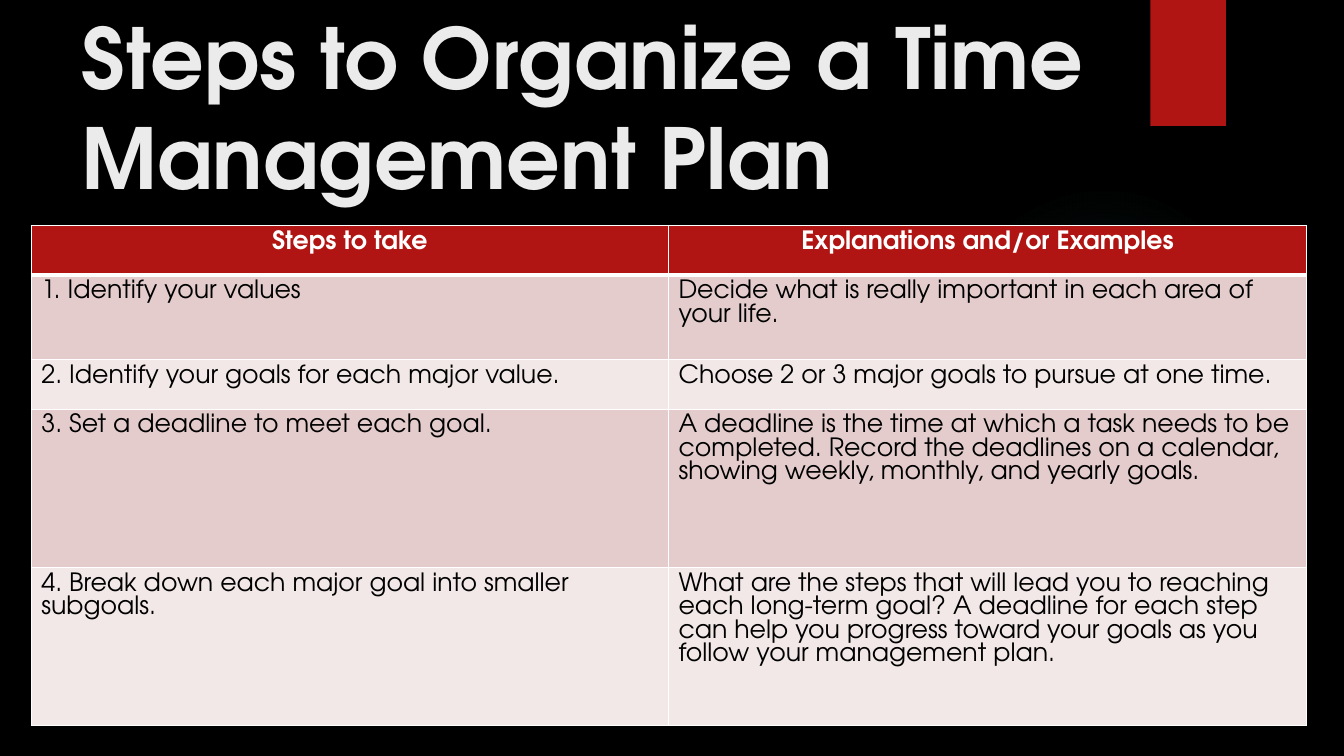
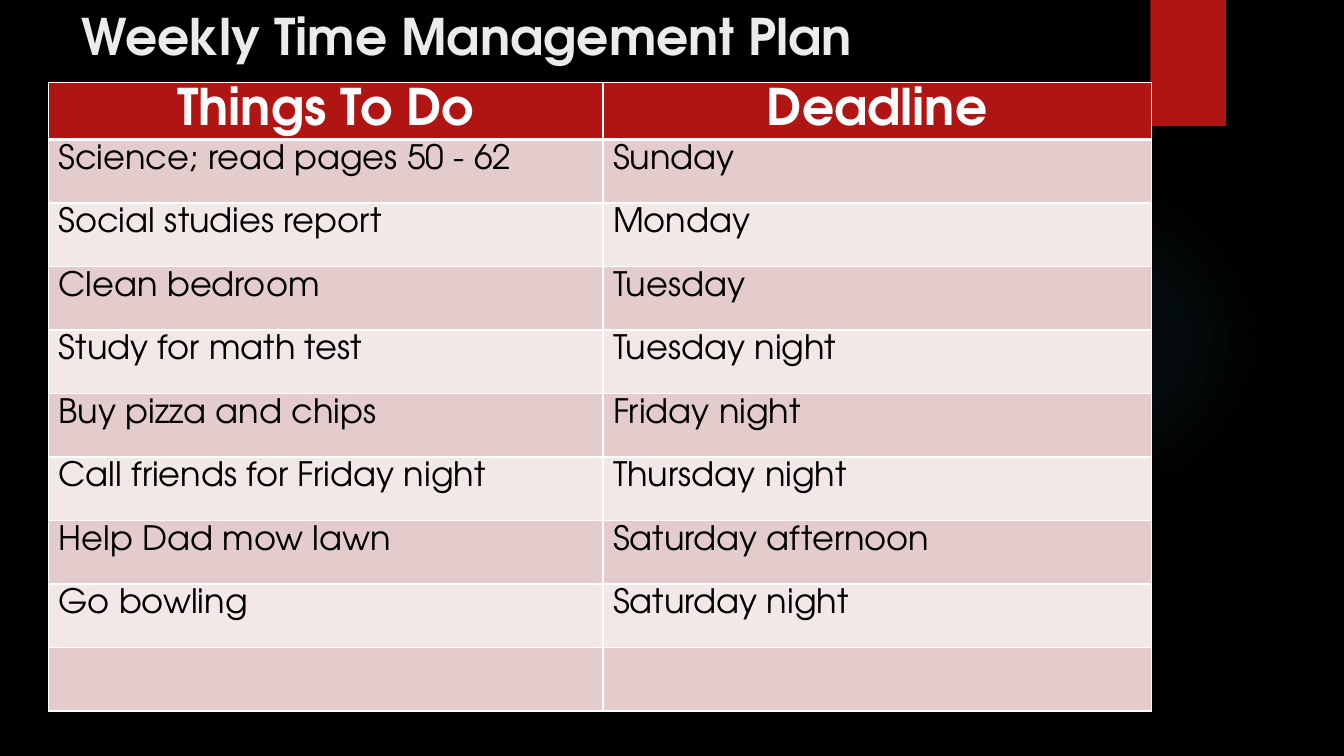
from lxml import etree
from pptx import Presentation
from pptx import util as u
from pptx.dml.color import RGBColor
from pptx.enum import shapes, text
from pptx.oxml import parse_xml
from pptx.oxml.ns import nsdecls, qn

Inches = u.Inches
FONT = "TeX Gyre Adventor"
BLACK, WHITE, TITLE, RED, GLOW = "000000", "FFFFFF", "EBEBEB", "B01513", "50B9C1"
BANDS = ("E4CCCC", "F2E8E7")
GLOW_STOPS = ((0, 7), (36, 6), (69, 0))


def color(value):
    """Turn a hex string into a colour."""
    return RGBColor.from_string(value)


class Deck:
    """Hold the shared style and the current slide."""

    def __init__(self):
        """Start an empty widescreen presentation."""
        self.presentation = Presentation()
        self.presentation.slide_width = Inches(13.33)
        self.presentation.slide_height = Inches(7.5)
        self.slide = None

    def add_slide(self, title, size, height):
        """Add a slide with its background, decoration and title."""
        self.slide = self.presentation.slides.add_slide(self.presentation.slide_layouts[5])
        background = self.slide.background.fill
        background.solid()
        background.fore_color.rgb = color(BLACK)
        self.add_glow()
        self.add_tab()
        self.set_title(title, size, height)

    def add_plain_shape(self, kind, left, top, width, height):
        """Add a red shape without outline or shadow."""
        shape = self.slide.shapes.add_shape(
            kind, Inches(left), Inches(top), Inches(width), Inches(height))
        shape.shadow.inherit = False
        shape.line.fill.background()
        shape.fill.solid()
        shape.fill.fore_color.rgb = color(RED)
        return shape

    def add_glow(self):
        """Add the faint round glow."""
        shape = self.add_plain_shape(shapes.MSO_SHAPE.OVAL, 9.41, 1.83, 3.08, 3.08)
        stops = "".join(
            f'<a:gs pos="{place * 1000}"><a:srgbClr val="{GLOW}">'
            f'<a:alpha val="{alpha * 1000}"/></a:srgbClr></a:gs>'
            for place, alpha in GLOW_STOPS)
        properties = shape._element.spPr
        properties.replace(properties.find(qn("a:solidFill")), parse_xml(
            f'<a:gradFill {nsdecls("a")}><a:gsLst>{stops}</a:gsLst><a:path path="circle">'
            '<a:fillToRect l="50000" t="50000" r="50000" b="50000"/></a:path></a:gradFill>'))

    def add_tab(self):
        """Add the red tab with its soft shadow."""
        shape = self.add_plain_shape(shapes.MSO_SHAPE.RECTANGLE, 11.41, 0, 0.75, 1.25)
        shape._element.spPr.find(qn("a:effectLst")).append(parse_xml(
            f'<a:outerShdw {nsdecls("a")} blurRad="{u.Pt(3)}" dist="{u.Pt(2)}" dir="5400000">'
            f'<a:srgbClr val="{BLACK}"><a:alpha val="45000"/></a:srgbClr></a:outerShdw>'))

    def set_title(self, title, size, height):
        """Fill and place the title placeholder."""
        shape = self.slide.shapes.title
        shape.left, shape.top = Inches(0.71), Inches(0)
        shape.width, shape.height = Inches(10.29), Inches(height)
        frame = shape.text_frame
        frame.text = title
        frame.word_wrap = True
        frame.auto_size = text.MSO_AUTO_SIZE.NONE
        frame.vertical_anchor = text.MSO_ANCHOR.TOP
        paragraph = frame.paragraphs[0]
        paragraph.alignment = text.PP_ALIGN.LEFT
        self.set_font(paragraph, size, TITLE, True)

    def set_font(self, paragraph, size, value, bold):
        """Format a whole paragraph."""
        font = paragraph.font
        font.name, font.size, font.bold = FONT, u.Pt(size), bold
        font.color.rgb = color(value)

    def add_table(self, left, top, widths, heights, rows, header_size, body_size):
        """Add a banded table whose first row is the header."""
        table = self.slide.shapes.add_table(
            len(rows), len(widths), Inches(left), Inches(top),
            Inches(sum(widths)), Inches(sum(heights))).table
        for column, width in zip(table.columns, widths):
            column.width = Inches(width)
        for index, (row, height, words) in enumerate(zip(table.rows, heights, rows)):
            row.height = Inches(height)
            header = index == 0
            for cell, content in zip(row.cells, words):
                self.set_borders(cell, index)
                cell.fill.solid()
                cell.fill.fore_color.rgb = color(RED if header else BANDS[(index - 1) % 2])
                cell.text = content
                paragraph = cell.text_frame.paragraphs[0]
                paragraph.alignment = text.PP_ALIGN.CENTER if header else text.PP_ALIGN.LEFT
                self.set_font(paragraph, header_size if header else body_size,
                              WHITE if header else BLACK, header)

    def set_borders(self, cell, index):
        """Draw white cell borders, thick below the header."""
        properties = cell._tc.get_or_add_tcPr()
        thick = {(0, "B"), (1, "T")}
        for side in "LRTB":
            width = u.Pt(3 if (index, side) in thick else 1)
            line = etree.SubElement(properties, qn(f"a:ln{side}"), w=str(width))
            fill = etree.SubElement(line, qn("a:solidFill"))
            etree.SubElement(fill, qn("a:srgbClr"), val=WHITE)


STEPS = [
    ("Steps to take", "Explanations and/or Examples"),
    ("1. Identify your values",
     "Decide what is really important in each area of your life."),
    ("2. Identify your goals for each major value.",
     "Choose 2 or 3 major goals to pursue at one time."),
    ("3. Set a deadline to meet each goal.",
     "A deadline is the time at which a task needs to be completed. Record the deadlines "
     "on a calendar, showing weekly, monthly, and yearly goals."),
    ("4. Break down each major goal into smaller subgoals.",
     "What are the steps that will lead you to reaching each long-term goal? A deadline for "
     "each step can help you progress toward your goals as you follow your management plan."),
]
WEEK = [
    ("Things To Do", "Deadline"),
    ("Science; read pages 50 - 62", "Sunday"),
    ("Social studies report", "Monday"),
    ("Clean bedroom", "Tuesday"),
    ("Study for math test", "Tuesday night"),
    ("Buy pizza and chips", "Friday night"),
    ("Call friends for Friday night", "Thursday night"),
    ("Help Dad mow lawn", "Saturday afternoon"),
    ("Go bowling", "Saturday night"),
    ("", ""),
]


def main():
    """Build both slides and save them."""
    deck = Deck()
    deck.add_slide("Steps to Organize a Time Management Plan", 60, 2.03)
    deck.add_table(0.31, 2.24, (6.32, 6.33), (0.49, 0.84, 0.49, 1.57, 1.57), STEPS, 18, 18)
    deck.add_slide("Weekly Time Management Plan", 36, 1.15)
    deck.add_table(0.48, 0.82, (5.5, 5.44), [0.43] + [0.63] * 9, WEEK, 36, 24)
    deck.presentation.save("out.pptx")


if __name__ == "__main__":
    main()
